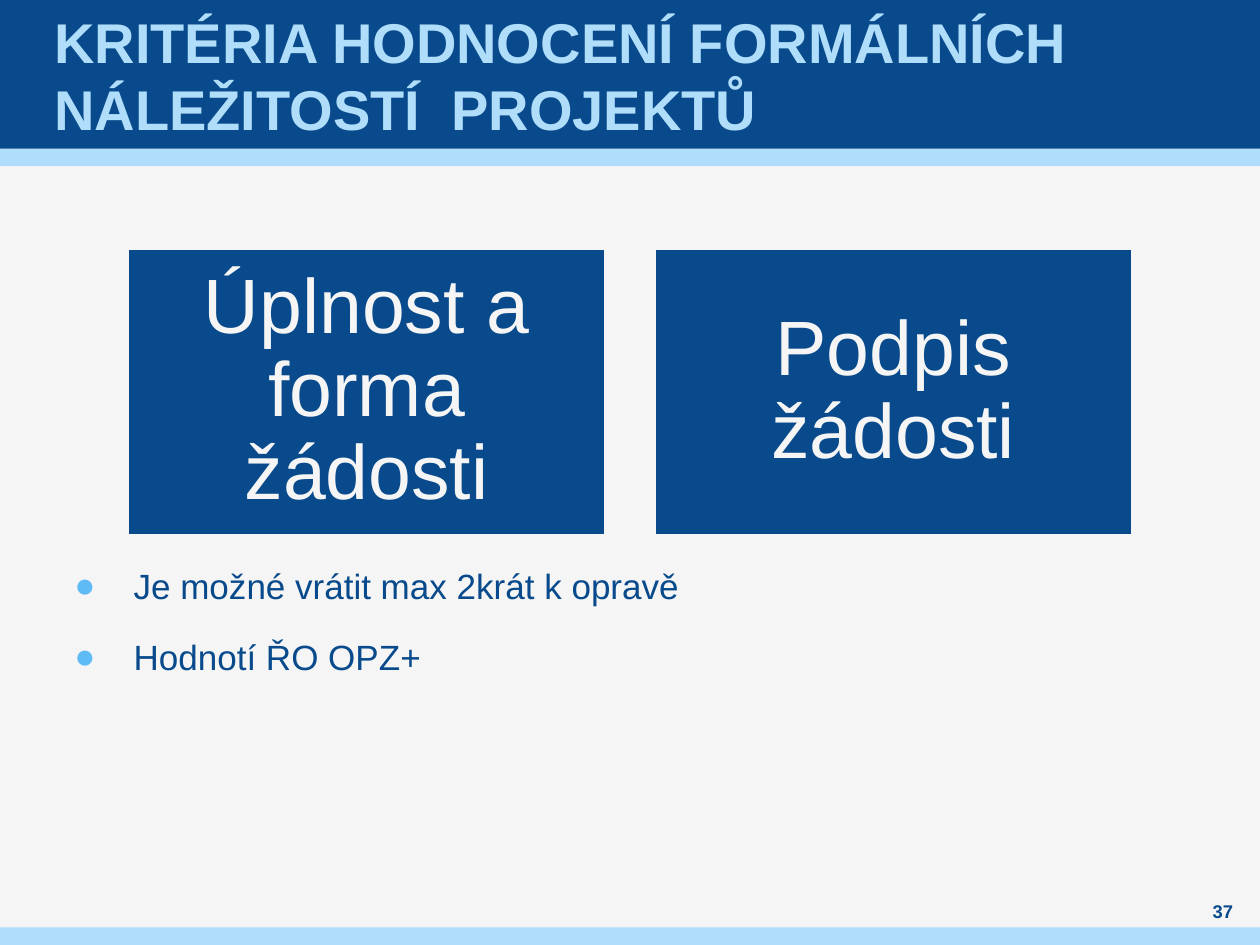
from dataclasses import dataclass

from pptx import Presentation
from pptx.dml.color import RGBColor
from pptx.enum.shapes import MSO_SHAPE
from pptx.enum.text import MSO_ANCHOR, MSO_AUTO_SIZE, PP_ALIGN
from pptx.oxml import parse_xml
from pptx.oxml.ns import nsdecls
from pptx.util import Inches, Pt

NAVY, SKY, PALE, DOT = "084A8B", "AFDDFA", "F5F5F5", "5FBBF5"


@dataclass
class Box:
    left: float
    top: float
    width: float
    height: float

    def emu(self) -> list:
        """Give the four lengths in slide units."""
        return [Inches(n) for n in (self.left, self.top, self.width, self.height)]


def paint(color, code: str) -> None:
    """Set a color from its hex string."""
    color.rgb = RGBColor.from_string(code)


def place(shape, box: Box) -> None:
    """Move a placeholder to its box."""
    shape.left, shape.top, shape.width, shape.height = box.emu()


def write(shape, *lines: str, size: float, color: str, bold: bool = False,
          align=PP_ALIGN.LEFT, anchor=MSO_ANCHOR.MIDDLE, inset=(0, 0),
          pitch=1.0, before: float = 0, after: float = 0) -> None:
    """Fill a shape with formatted lines of text."""
    frame = shape.text_frame
    frame.word_wrap = True
    frame.auto_size = MSO_AUTO_SIZE.NONE
    frame.vertical_anchor = anchor
    frame.margin_left = frame.margin_right = Inches(inset[0])
    frame.margin_top = frame.margin_bottom = Inches(inset[1])
    frame.text = "\n".join(lines)
    for para in frame.paragraphs:
        para.alignment, para.line_spacing = align, pitch
        para.space_before, para.space_after = Pt(before), Pt(after)
        font = para.runs[0].font
        font.name, font.size, font.bold = "Arial", Pt(size), bold
        paint(font.color, color)


def dot(para, indent: float, color: str) -> None:
    """Give a paragraph a round bullet and a hanging indent."""
    props = para._p.get_or_add_pPr()
    props.set("marL", str(Inches(indent)))
    props.set("indent", str(-Inches(indent)))
    for tag in (f'<a:buClr {nsdecls("a")}><a:srgbClr val="{color}"/></a:buClr>',
                f'<a:buFont {nsdecls("a")} typeface="Arial"/>',
                f'<a:buChar {nsdecls("a")} char="●"/>'):
        props.append(parse_xml(tag))


def block(slide, box: Box, fill: str, edge: str = ""):
    """Add a flat rectangle with an optional edge."""
    shape = slide.shapes.add_shape(MSO_SHAPE.RECTANGLE, *box.emu())
    shape.shadow.inherit = False
    shape.fill.solid()
    paint(shape.fill.fore_color, fill)
    if edge:
        shape.line.width = Pt(2)
        paint(shape.line.color, edge)
    else:
        shape.line.fill.background()
    return shape


def band(slide, top: float, height: float, fill: str) -> None:
    """Add a full-width band behind all the text."""
    item = block(slide, Box(0, top, 10, height), fill)._element
    item.getparent().insert(2, item)


def main() -> None:
    """Build and save the slide."""
    deck = Presentation()
    deck.slide_width, deck.slide_height = Inches(10), Inches(7.5)
    slide = deck.slides.add_slide(deck.slide_layouts[1])
    slide.background.fill.solid()
    paint(slide.background.fill.fore_color, PALE)

    for top, height, fill in ((0, 1.18, NAVY), (1.18, 0.14, SKY), (7.36, 0.14, SKY)):
        band(slide, top, height, fill)

    title, body = slide.placeholders
    place(title, Box(0.39, 0, 9.21, 1.18))
    write(title, "KRITÉRIA HODNOCENÍ FORMÁLNÍCH NÁLEŽITOSTÍ  PROJEKTŮ",
          size=32, color=SKY, bold=True, inset=(0.04, 0))

    place(body, Box(0.59, 4.41, 8.82, 2.28))
    write(body, "Je možné vrátit max 2krát k opravě", "Hodnotí ŘO OPZ+",
          size=20, color=NAVY, anchor=MSO_ANCHOR.TOP,
          pitch=Pt(28.8), before=6, after=6)
    for para in body.text_frame.paragraphs:
        dot(para, 0.47, DOT)

    width, gap = 3.8, 0.38
    for col, text in enumerate(("Úplnost a forma žádosti", "Podpis žádosti")):
        card = block(slide, Box(1.01 + col * (width + gap), 1.97, width, 2.28), NAVY, PALE)
        write(card, text, size=44, color=PALE, align=PP_ALIGN.CENTER,
              inset=(0.18, 0.18), pitch=0.9)

    page = slide.shapes.add_textbox(*Box(9.45, 7.13, 0.51, 0.2).emu())
    write(page, "37", size=10.5, color=NAVY, bold=True, align=PP_ALIGN.CENTER, after=6)
    deck.save("out.pptx")


if __name__ == "__main__":
    main()
